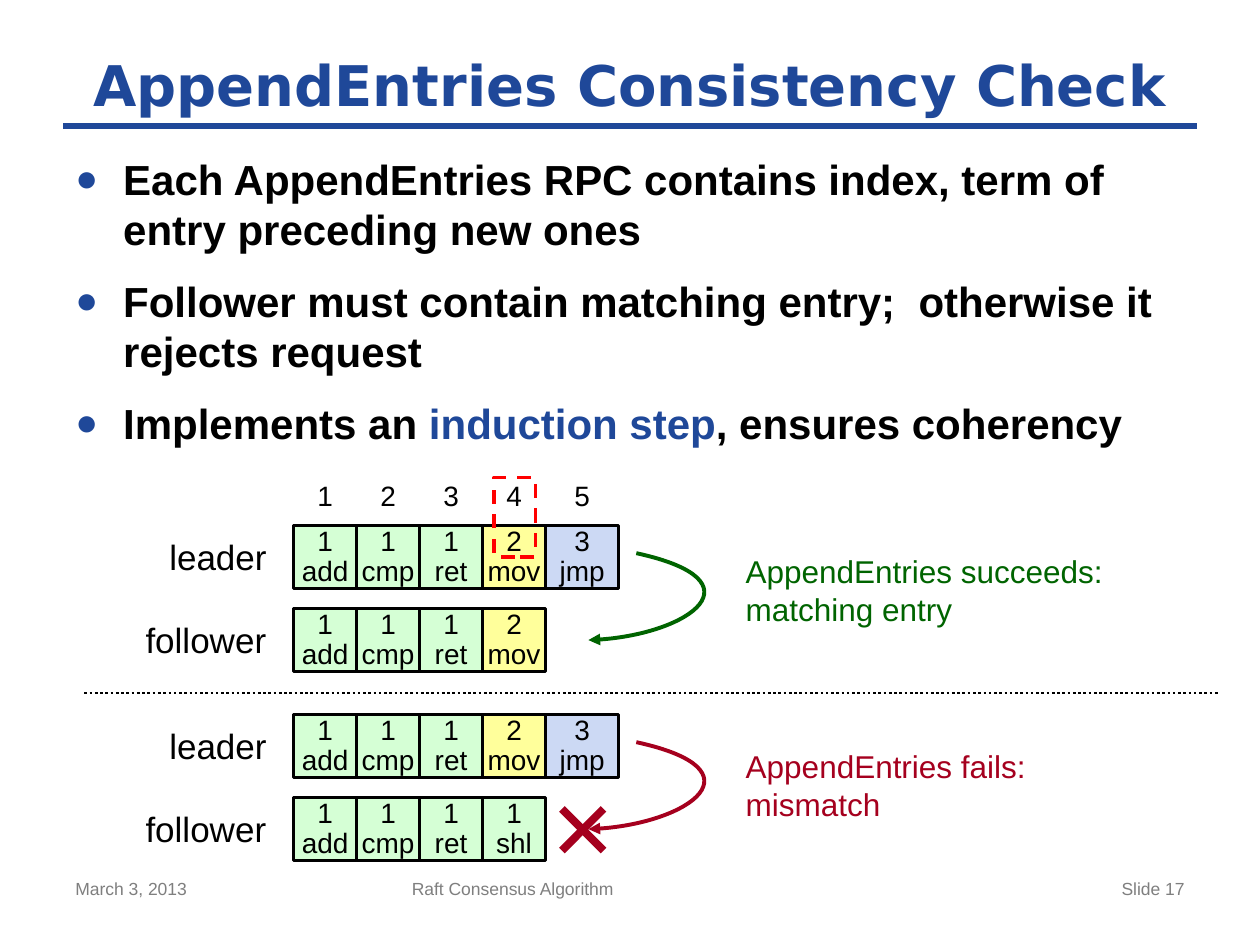
from lxml import etree
from pptx import Presentation, util as u
from pptx.dml.color import RGBColor
from pptx.enum import dml, shapes, text
from pptx.oxml import parse_xml
from pptx.oxml.ns import nsdecls, qn

BLUE, BLACK, GRAY, GREEN, RED = "1F4899", "000000", "7F7F7F", "006400", "A5001E"
LEFT, CENTER, RIGHT = text.PP_ALIGN.LEFT, text.PP_ALIGN.CENTER, text.PP_ALIGN.RIGHT
TERM_FILLS = {"1": "D5FFD5", "2": "FFFF9B", "3": "CCD9F4"}

presentation = Presentation()
presentation.slide_width, presentation.slide_height = u.Inches(10), u.Inches(7.5)
slide = presentation.slides.add_slide(presentation.slide_layouts[6])
add = slide.shapes


def write(shape, paragraphs, size, color=BLACK, align=LEFT, font="Arial",
          bold=False, inset=None, frame_format=None, paragraph_format=None):
    """Fill a shape with paragraphs; each is a list of (words, colour) or a string."""
    frame = shape.text_frame
    for name, value in {"word_wrap": True, **(frame_format or {})}.items():
        setattr(frame, name, value)
    if inset is not None:
        for side in ("left", "right", "top", "bottom"):
            setattr(frame, f"margin_{side}", u.Inches(inset))
    for index, parts in enumerate(paragraphs):
        paragraph = frame.paragraphs[0] if index == 0 else frame.add_paragraph()
        for name, value in {"alignment": align, **(paragraph_format or {})}.items():
            setattr(paragraph, name, value)
        for words, tint in [(parts, color)] if isinstance(parts, str) else parts:
            for number, line in enumerate(words.split("\n")):
                if number:
                    paragraph.add_line_break()
                run = paragraph.add_run()
                run.text = line
                for name, value in {"size": u.Pt(size), "name": font, "bold": bold}.items():
                    setattr(run.font, name, value)
                run.font.color.rgb = RGBColor.from_string(tint)
    return frame


def rule(x1, y1, x2, y2, color, width, dash=None):
    line = add.add_connector(shapes.MSO_CONNECTOR.STRAIGHT, *map(u.Inches, (x1, y1, x2, y2)))
    line.line.color.rgb = RGBColor.from_string(color)
    line.line.width = u.Pt(width)
    line.line.dash_style = dash
    etree.SubElement(line._element.spPr, qn("a:effectLst"))


# Title and underline
rule(0.5, 1, 9.5, 1, BLUE, 4)
title = add.add_textbox(*map(u.Inches, (0.5, 0.33, 9, 0.67)))
write(title, ["AppendEntries Consistency Check"], 32, BLUE, CENTER, "DejaVu Sans", True,
      frame_format={"vertical_anchor": text.MSO_ANCHOR.MIDDLE})

# Bulleted points
body = add.add_textbox(*map(u.Inches, (0.5, 1.17, 9, 2.67)))
points = write(body, [
    "Each AppendEntries RPC contains index, term of entry preceding new ones",
    "Follower must contain matching entry;  otherwise it rejects request",
    [("Implements an ", BLACK), ("induction step", BLUE), (", ensures coherency", BLACK)],
], 24, bold=True, paragraph_format={"space_before": u.Pt(12)})
for paragraph in points.paragraphs:
    properties = paragraph._p.get_or_add_pPr()
    properties.set("marL", str(u.Inches(0.38)))
    properties.set("indent", str(u.Inches(-0.38)))
    for bullet in (f'<a:buClr {nsdecls("a")}><a:srgbClr val="{BLUE}"/></a:buClr>',
                   f'<a:buSzPct {nsdecls("a")} val="90000"/>',
                   f'<a:buFont {nsdecls("a")} typeface="Arial"/>',
                   f'<a:buChar {nsdecls("a")} char="●"/>'):
        properties.append(parse_xml(bullet))

# Footer
for words, left, width, align in (("March 3, 2013", 0.5, 2.33, LEFT),
                                  ("Raft Consensus Algorithm", 3.17, 3.75, LEFT),
                                  ("Slide 17", 7.17, 2.33, RIGHT)):
    footer = add.add_textbox(*map(u.Inches, (left, 6.92, width, 0.43)))
    write(footer, [words], 10, GRAY, align)

# Log grid: five columns, the last one a little wider
CELL, GRID_LEFT = 0.5, 2.33
columns = [(GRID_LEFT + CELL * i, 0.58 if i == 4 else CELL) for i in range(5)]
for index, (left, width) in enumerate(columns, 1):
    number = add.add_textbox(*map(u.Inches, (left, 3.75, width, 0.37)))
    write(number, [str(index)], 16, align=CENTER)

LEADER = "1 add,1 cmp,1 ret,2 mov,3 jmp"
scenarios = (
    (4.17, "1 add,1 cmp,1 ret,2 mov", GREEN,
     ["AppendEntries succeeds:", "matching entry"], 4.33, 3.06),
    (5.67, "1 add,1 cmp,1 ret,1 shl", RED,
     ["AppendEntries fails:", "mismatch"], 5.88, 2.45),
)
for top, follower, color, note, note_top, note_width in scenarios:
    # Names and log entries
    for row, (name, log, label_width) in enumerate((("leader", LEADER, 0.78),
                                                    ("follower", follower, 0.97))):
        row_top = top + 0.66 * row
        label = add.add_textbox(*map(u.Inches, (2.12 - label_width, row_top + 0.08,
                                                label_width, 0.34)))
        write(label, [name], 20, align=CENTER, inset=0, frame_format={"word_wrap": False})
        for (left, width), entry in zip(columns, log.split(",")):
            cell = add.add_shape(shapes.MSO_SHAPE.RECTANGLE,
                                 *map(u.Inches, (left, row_top, width, CELL)))
            cell.shadow.inherit = False
            cell.fill.solid()
            cell.fill.fore_color.rgb = RGBColor.from_string(TERM_FILLS[entry[0]])
            cell.line.color.rgb = RGBColor.from_string(BLACK)
            cell.line.width = u.Pt(1.5)
            write(cell, [entry.replace(" ", "\n")], 16, align=CENTER, inset=0,
                  frame_format={"vertical_anchor": text.MSO_ANCHOR.MIDDLE},
                  paragraph_format={"line_spacing": u.Pt(17)})

    # Curved arrow: outline fixes the extent, then becomes one Bezier segment
    curve_top = top + 0.22
    builder = add.build_freeform(u.Inches(5.05), u.Inches(curve_top))
    builder.add_line_segments([(u.Inches(5.58), u.Inches(curve_top + 0.3)),
                               (u.Inches(4.67), u.Inches(curve_top + 0.69))], close=False)
    arrow = builder.convert_to_shape()
    arrow.shadow.inherit = False
    arrow.fill.background()
    arrow.line.color.rgb = RGBColor.from_string(color)
    arrow.line.width = u.Pt(2.25)
    etree.SubElement(arrow.line._get_or_add_ln(), qn("a:tailEnd"), type="triangle")
    outline = next(arrow._element.iter(qn("a:path")))
    for segment in outline.findall(qn("a:lnTo")):
        outline.remove(segment)
    bezier = etree.SubElement(outline, qn("a:cubicBezTo"))
    for x, y in ((1.39, 0.22), (0.76, 0.67), (0, 0.69)):
        etree.SubElement(bezier, qn("a:pt"), x=str(u.Inches(x)), y=str(u.Inches(y)))

    # Outcome
    outcome = add.add_textbox(*map(u.Inches, (5.82, note_top, note_width, 0.71)))
    write(outcome, note, 18, color, frame_format={"word_wrap": False})

# Cross over the rejected entry
for start, end in ((6.42, 6.75), (6.75, 6.42)):
    rule(4.46, start, 4.79, end, RED, 4.5)

# Highlighted index and term
highlight = add.add_shape(shapes.MSO_SHAPE.RECTANGLE, *map(u.Inches, (3.92, 3.79, 0.33, 0.63)))
highlight.shadow.inherit = False
highlight.fill.background()
highlight.line.color.rgb = RGBColor.from_string("FF0000")
highlight.line.width = u.Pt(2)
highlight.line.dash_style = dml.MSO_LINE.DASH

# Divider between the scenarios
rule(0.67, 5.5, 9.67, 5.5, BLACK, 1.5, dml.MSO_LINE.ROUND_DOT)

presentation.save("out.pptx")
